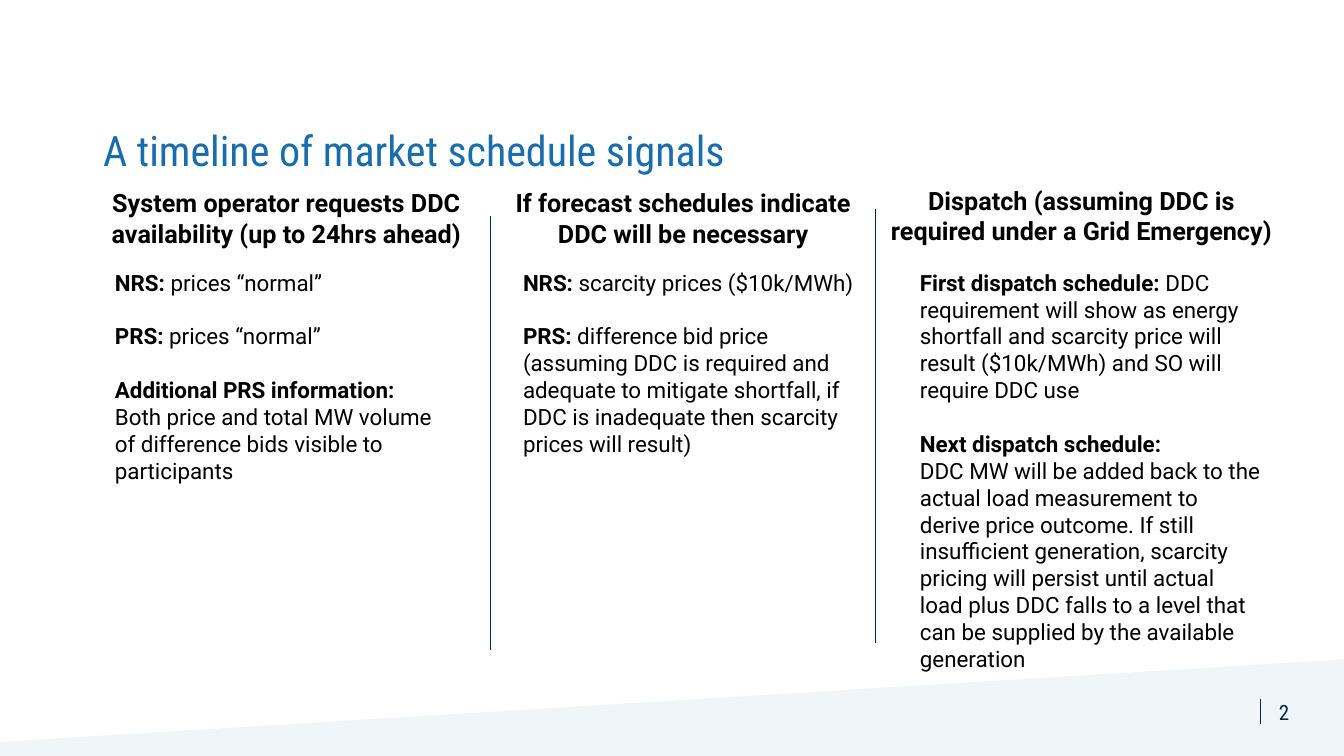
"""Build a slide with a three-column timeline of market schedule signals."""
from dataclasses import dataclass

from lxml.etree import SubElement
from pptx import Presentation
from pptx.dml.color import RGBColor
from pptx.enum.shapes import MSO_CONNECTOR
from pptx.enum.text import MSO_ANCHOR, MSO_AUTO_SIZE, PP_ALIGN
from pptx.oxml.ns import qn
from pptx.util import Pt


@dataclass(frozen=True)
class Theme:
    title: RGBColor = RGBColor(0x1A, 0x6D, 0xAD)
    navy: RGBColor = RGBColor(0x00, 0x27, 0x49)
    text: RGBColor = RGBColor(0x00, 0x00, 0x00)
    band: RGBColor = RGBColor(0xF0, 0xF5, 0xF9)
    title_font: str = "Roboto Condensed"
    body_font: str = "Roboto"
    title_size: int = 30
    heading_size: int = 18
    body_size: int = 16
    number_size: int = 15


theme = Theme()


def style(p, name, size, color, align=PP_ALIGN.LEFT):
    """Format a whole paragraph."""
    p.alignment = align
    p.font.name, p.font.size = name, Pt(size)
    p.font.color.rgb = color


def add_text_frame(s, left, top, width, height):
    """Add a wrapping text box and return its frame."""
    tf = s.shapes.add_textbox(Pt(left), Pt(top), Pt(width), Pt(height)).text_frame
    tf.word_wrap = True
    return tf


prs = Presentation()
prs.slide_width, prs.slide_height = Pt(960), Pt(540)
s = prs.slides.add_slide(prs.slide_layouts[5])

builder = s.shapes.build_freeform(Pt(0), Pt(530))
builder.add_line_segments([(Pt(960), Pt(471)), (Pt(960), Pt(540)), (Pt(0), Pt(540))])
band = builder.convert_to_shape()
band.shadow.inherit = False
band.fill.solid()
band.fill.fore_color.rgb = theme.band
band.line.fill.background()

title = s.shapes.title
title.left, title.top, title.width, title.height = Pt(66.5), Pt(78.5), Pt(790), Pt(52)
tf = title.text_frame
tf.text = "A timeline of market schedule signals"
tf.auto_size = MSO_AUTO_SIZE.NONE
tf.vertical_anchor = MSO_ANCHOR.MIDDLE
p = tf.paragraphs[0]
p.line_spacing = 1.14
style(p, theme.title_font, theme.title_size, theme.title)

for x, top, bottom in [(350.5, 154, 464), (625.5, 149, 459), (900, 499, 517)]:
    line = s.shapes.add_connector(MSO_CONNECTOR.STRAIGHT, Pt(x), Pt(top), Pt(x), Pt(bottom))
    line.line.color.rgb = theme.navy
    line.line.width = Pt(0.5)
    SubElement(line._element.spPr, qn("a:effectLst"))

tf = add_text_frame(s, 712, 494.5, 216, 29)
tf.vertical_anchor = MSO_ANCHOR.MIDDLE
p = tf.paragraphs[0]
p.text = "2"
style(p, theme.title_font, theme.number_size, theme.navy, PP_ALIGN.RIGHT)

headings = [
    (67, 130.5, 275, "System operator requests DDC availability (up to 24hrs ahead)"),
    (350.5, 130.5, 275, "If forecast schedules indicate DDC will be necessary"),
    (625.5, 128.5, 294, "Dispatch (assuming DDC is required under a Grid Emergency)"),
]
for left, top, width, heading in headings:
    p = add_text_frame(s, left, top, width, 51).paragraphs[0]
    p.text = heading
    style(p, theme.body_font, theme.heading_size, theme.text, PP_ALIGN.CENTER)
    p.font.bold = True

columns = [
    (75, 163, [
        ("NRS:", " prices “normal”"),
        ("PRS:", " prices “normal”"),
        ("Additional PRS information:", ""),
        ("", "Both price and total MW volume of difference bids visible to participants"),
    ]),
    (366.5, 143, [
        ("NRS:", " scarcity prices ($10k/MWh)"),
        ("PRS:", " difference bid price (assuming DDC is required and adequate to mitigate "
                 "shortfall, if DDC is inadequate then scarcity prices will result)"),
    ]),
    (650, 298, [
        ("First dispatch schedule: ", "DDC requirement will show as energy shortfall and "
                                      "scarcity price will result ($10k/MWh) and SO will "
                                      "require DDC use"),
        ("Next dispatch schedule:", ""),
        ("", "DDC MW will be added back to the actual load measurement to derive price "
             "outcome. If still insufficient generation, scarcity pricing will persist until "
             "actual load plus DDC falls to a level that can be supplied by the available "
             "generation"),
    ]),
]
for left, height, items in columns:
    tf = add_text_frame(s, left, 188.5, 259, height)
    for i, (label, detail) in enumerate(items):
        p = tf.add_paragraph() if i else tf.paragraphs[0]
        if i and label:
            p.space_before = Pt(19.2)
        style(p, theme.body_font, theme.body_size, theme.text)
        for text, bold in [(label, True), (detail, False)]:
            if text:
                r = p.add_run()
                r.text, r.font.bold = text, bold

prs.save("out.pptx")
